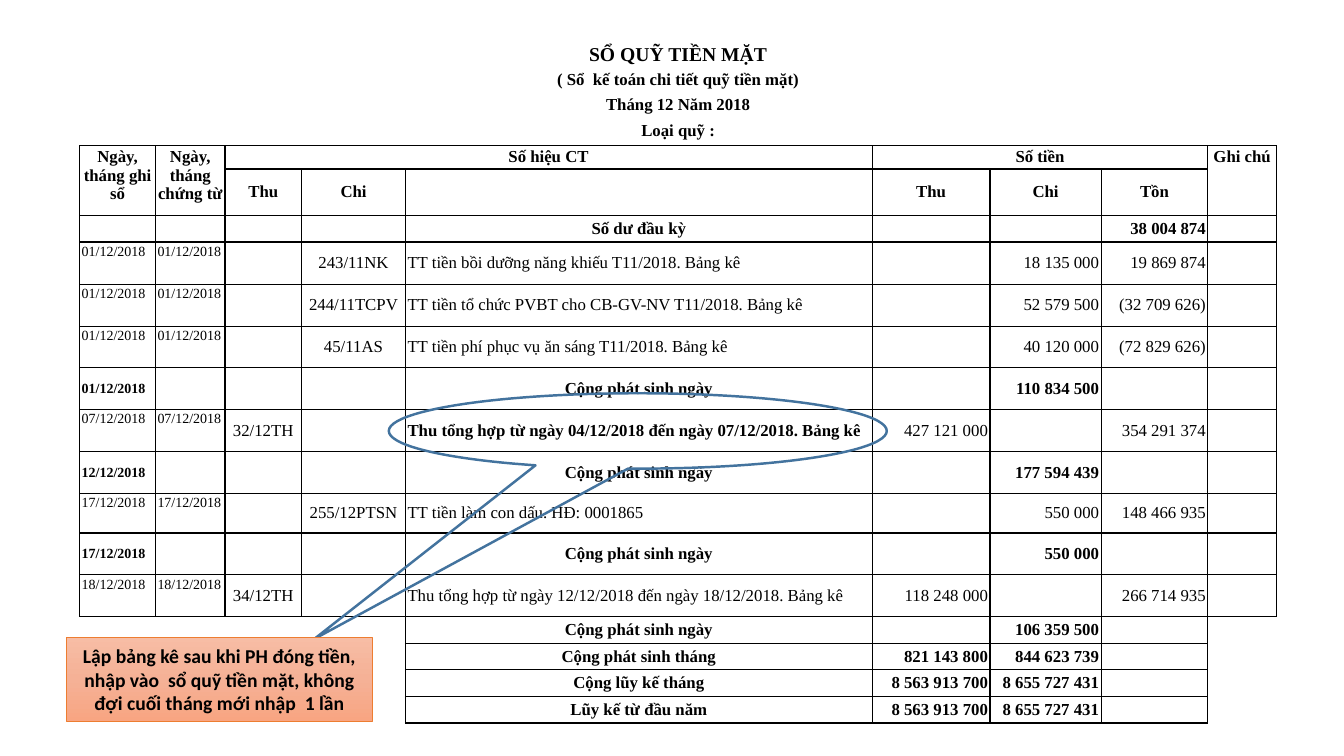
import copy
import dataclasses

import lxml.etree
import pptx
import pptx.dml.color
import pptx.enum.shapes
import pptx.enum.text
import pptx.oxml.ns
import pptx.util

Cm = pptx.util.Cm
Pt = pptx.util.Pt
Align = pptx.enum.text.PP_ALIGN
Anchor = pptx.enum.text.MSO_ANCHOR
Shape = pptx.enum.shapes.MSO_SHAPE
qn = pptx.oxml.ns.qn

COLORS = {
    "ink": "000000", "paper": "FFFFFF", "bubble": "43739E", "edge": "ED7D31",
    "light": "F7BDA5", "middle": "F5B196", "deep": "F8A582",
}
WIDTHS = [1.91, 1.75, 1.93, 2.62, 11.76, 2.97, 2.8, 2.69, 1.73]
TITLES = ["SỔ QUỸ TIỀN MẶT", "( Sổ  kế toán chi tiết quỹ tiền mặt)", "Tháng 12 Năm 2018", "Loại quỹ :"]
HEAD = len(TITLES)
BODY = HEAD + 2
DAILY = "Cộng phát sinh ngày"


@dataclasses.dataclass
class Entry:
    high: float
    text: str
    day: str = ""
    thu: str = ""
    chi: str = ""
    cash_in: str = ""
    cash_out: str = ""
    left: str = ""
    total: bool = False
    mark: bool = False


@dataclasses.dataclass
class Head:
    row: int
    col: int
    text: str
    rows: int = 1
    cols: int = 1


ENTRIES = [
    Entry(0.67, "Số dư đầu kỳ", left="38 004 874", total=True),
    Entry(1.06, "TT tiền bồi dưỡng năng khiếu T11/2018. Bảng kê", "01/12/2018",
          chi="243/11NK", cash_out="18 135 000", left="19 869 874"),
    Entry(1.06, "TT tiền tổ chức PVBT cho CB-GV-NV T11/2018. Bảng kê", "01/12/2018",
          chi="244/11TCPV", cash_out="52 579 500", left="(32 709 626)"),
    Entry(1.05, "TT tiền phí phục vụ ăn sáng T11/2018. Bảng kê", "01/12/2018",
          chi="45/11AS", cash_out="40 120 000", left="(72 829 626)"),
    Entry(1.05, DAILY, "01/12/2018", cash_out="110 834 500", total=True),
    Entry(1.06, "Thu tổng hợp từ ngày 04/12/2018 đến ngày 07/12/2018. Bảng kê", "07/12/2018",
          thu="32/12TH", cash_in="427 121 000", left="354 291 374", mark=True),
    Entry(1.05, DAILY, "12/12/2018", cash_out="177 594 439", total=True),
    Entry(1.0, "TT tiền làm con dấu. HĐ: 0001865", "17/12/2018",
          chi="255/12PTSN", cash_out="550 000", left="148 466 935"),
    Entry(1.05, DAILY, "17/12/2018", cash_out="550 000", total=True),
    Entry(1.06, "Thu tổng hợp từ ngày 12/12/2018 đến ngày 18/12/2018. Bảng kê", "18/12/2018",
          thu="34/12TH", cash_in="118 248 000", left="266 714 935"),
    Entry(0.67, DAILY, cash_out="106 359 500", total=True),
    Entry(0.67, "Cộng phát sinh tháng", cash_in="821 143 800", cash_out="844 623 739", total=True),
    Entry(0.67, "Cộng lũy kế tháng", cash_in="8 563 913 700", cash_out="8 655 727 431", total=True),
    Entry(0.67, "Lũy kế từ đầu năm", cash_in="8 563 913 700", cash_out="8 655 727 431", total=True),
]
HEADS = [Head(row, 0, text, cols=len(WIDTHS)) for row, text in enumerate(TITLES)] + [
    Head(HEAD, 0, "Ngày, tháng ghi sổ", rows=2),
    Head(HEAD, 1, "Ngày, tháng chứng từ", rows=2),
    Head(HEAD, 2, "Số hiệu CT", cols=3),
    Head(HEAD, 5, "Số tiền", cols=3),
    Head(HEAD, 8, "Ghi chú", rows=2),
    Head(HEAD + 1, 2, "Thu"),
    Head(HEAD + 1, 3, "Chi"),
    Head(HEAD + 1, 5, "Thu"),
    Head(HEAD + 1, 6, "Chi"),
    Head(HEAD + 1, 7, "Tồn"),
]
HEIGHTS = [0.65] * HEAD + [0.59, 1.17] + [entry.high for entry in ENTRIES]
FOOT = len(HEIGHTS) - 4


def tint(name: str) -> pptx.dml.color.RGBColor:
    return pptx.dml.color.RGBColor.from_string(COLORS[name])


def boxed(row: int, col: int) -> bool:
    if not (HEAD <= row < len(HEIGHTS) and 0 <= col < len(WIDTHS)):
        return False
    return row < FOOT or 4 <= col <= 7


def frame(cell, row: int, col: int) -> None:
    props = cell._tc.get_or_add_tcPr()
    for side, down, right in (("L", 0, -1), ("R", 0, 1), ("T", -1, 0), ("B", 1, 0)):
        line = lxml.etree.SubElement(props, qn(f"a:ln{side}"), w=str(Pt(1)))
        if boxed(row, col) or boxed(row + down, col + right):
            fill = lxml.etree.SubElement(line, qn("a:solidFill"))
            lxml.etree.SubElement(fill, qn("a:srgbClr"), val=COLORS["ink"])
        else:
            lxml.etree.SubElement(line, qn("a:noFill"))
    cell.fill.solid()
    cell.fill.fore_color.rgb = tint("paper")


def style(para, font: str, size: float, bold: bool, align) -> None:
    para.alignment = align
    para.font.name = font
    para.font.size = Pt(size)
    para.font.bold = bold
    para.font.color.rgb = tint("ink")


def write(cell, text: str, size: float = 12, bold: bool = True,
          align=Align.CENTER, anchor=Anchor.MIDDLE) -> None:
    cell.text = text
    cell.vertical_anchor = anchor
    para = cell.text_frame.paragraphs[0]
    style(para, "Times New Roman", size, bold, align)
    if not text:
        lxml.etree.SubElement(para._p, qn("a:endParaRPr"), sz=str(size * 100))


def enter(table, row: int, entry: Entry) -> None:
    total = entry.total
    anchor = Anchor.MIDDLE if total else Anchor.TOP
    for col, day in enumerate((entry.day, "" if total else entry.day)):
        write(table.cell(row, col), day, 10, total, Align.LEFT, anchor)
    for col, code in enumerate((entry.thu, entry.chi), 2):
        write(table.cell(row, col), code, bold=total)
    align = Align.CENTER if total else Align.LEFT
    write(table.cell(row, 4), entry.text, bold=total or entry.mark, align=align)
    for col, sum_ in enumerate((entry.cash_in, entry.cash_out, entry.left), 5):
        write(table.cell(row, col), sum_, bold=total, align=Align.RIGHT)


def ledger(slide) -> None:
    table = slide.shapes.add_table(
        len(HEIGHTS), len(WIDTHS), Cm(2.01), Cm(1.07), Cm(sum(WIDTHS)), Cm(sum(HEIGHTS))).table
    table.first_row = False
    table.horz_banding = False
    for col, width in zip(table.columns, WIDTHS):
        col.width = Cm(width)
    for row, high in enumerate(HEIGHTS):
        table.rows[row].height = Cm(high)
        for col in range(len(WIDTHS)):
            cell = table.cell(row, col)
            cell.margin_left = cell.margin_right = Cm(0.05)
            cell.margin_top = cell.margin_bottom = Cm(0.05)
            frame(cell, row, col)
            if row < BODY or col == len(WIDTHS) - 1:
                write(cell, "")
    for head in HEADS:
        cell = table.cell(head.row, head.col)
        if head.rows > 1 or head.cols > 1:
            cell.merge(table.cell(head.row + head.rows - 1, head.col + head.cols - 1))
        for mark in cell._tc.findall(".//" + qn("a:endParaRPr")):
            mark.getparent().remove(mark)
        anchor = Anchor.MIDDLE if head.row > HEAD else Anchor.TOP
        write(cell, head.text, 14 if head.row == 0 else 12, anchor=anchor)
    for row, entry in enumerate(ENTRIES, BODY):
        enter(table, row, entry)


def bubble(slide) -> None:
    shape = slide.shapes.add_shape(
        Shape.OVAL_CALLOUT, Cm(9.8), Cm(9.91), Cm(12.55), Cm(1.9))
    shape.shadow.inherit = False
    shape.adjustments[0] = -0.65
    shape.adjustments[1] = 2.76
    shape.fill.background()
    shape.line.color.rgb = tint("bubble")
    shape.line.width = Pt(1.75)


def advice(slide) -> None:
    shape = slide.shapes.add_shape(Shape.RECTANGLE, Cm(1.68), Cm(16.05), Cm(7.7), Cm(2.13))
    shape.shadow.inherit = False
    shape.fill.gradient()
    shape.fill.gradient_angle = 270
    stops = shape._element.find(".//" + qn("a:gsLst"))
    stops.append(copy.deepcopy(stops[-1]))
    for stop, place, name in zip(shape.fill.gradient_stops, (0, 0.5, 1), ("light", "middle", "deep")):
        stop.position = place
        stop.color.rgb = tint(name)
    shape.line.color.rgb = tint("edge")
    shape.line.width = Pt(0.5)
    frame = shape.text_frame
    frame.word_wrap = True
    frame.vertical_anchor = Anchor.MIDDLE
    para = frame.paragraphs[0]
    para.text = ("Lập bảng kê sau khi PH đóng tiền, nhập vào  sổ quỹ tiền mặt, "
                 "không đợi cuối tháng mới nhập  1 lần")
    style(para, "Calibri", 14, True, Align.CENTER)


def main() -> None:
    deck = pptx.Presentation()
    deck.slide_width = Cm(33.87)
    deck.slide_height = Cm(19.05)
    slide = deck.slides.add_slide(deck.slide_layouts[6])
    ledger(slide)
    bubble(slide)
    advice(slide)
    deck.save("out.pptx")


if __name__ == "__main__":
    main()
